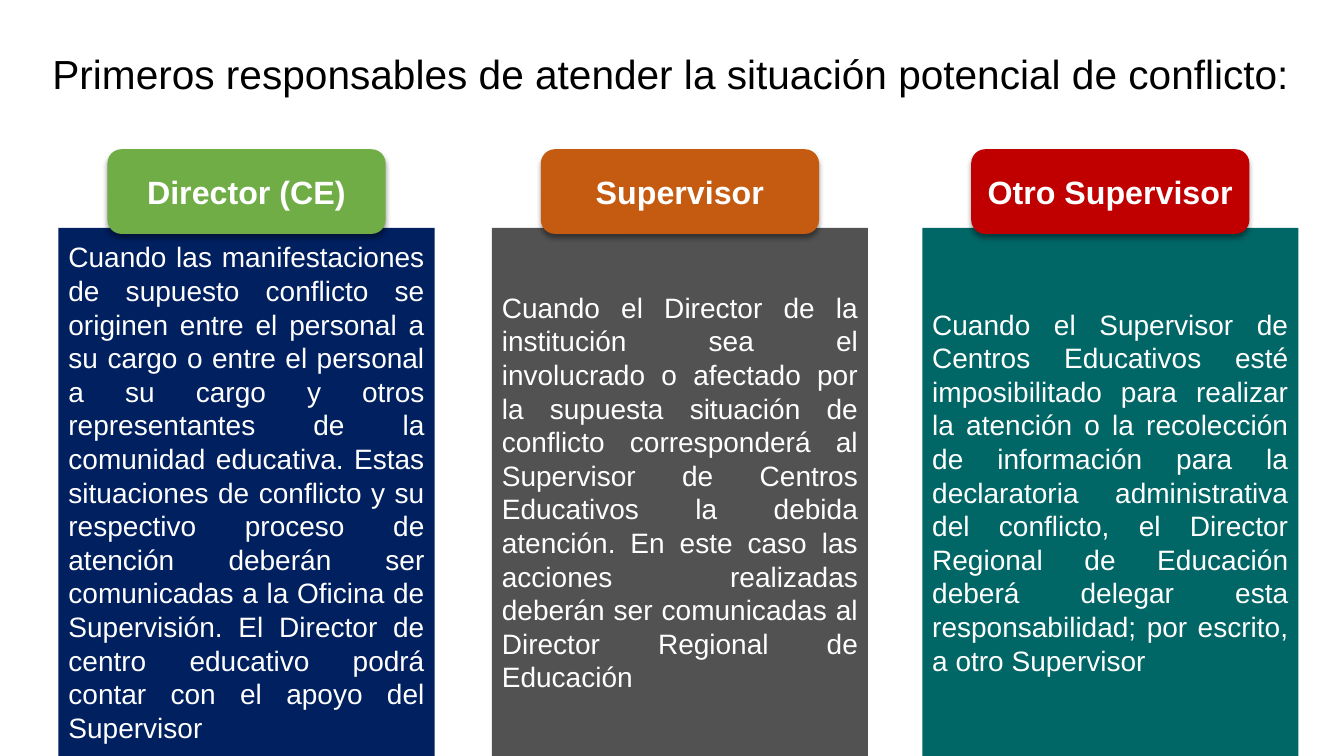
from lxml.etree import SubElement
from pptx import Presentation
from pptx.dml.color import RGBColor
from pptx.enum.shapes import MSO_SHAPE
from pptx.enum.text import MSO_ANCHOR, MSO_AUTO_SIZE, PP_ALIGN
from pptx.oxml.ns import qn
from pptx.util import Pt

BLACK = RGBColor(0x00, 0x00, 0x00)
WHITE = RGBColor(0xFF, 0xFF, 0xFF)
NAVY = RGBColor(0x00, 0x20, 0x60)
GRAY = RGBColor(0x52, 0x52, 0x52)
TEAL = RGBColor(0x00, 0x66, 0x66)
GREEN = RGBColor(0x70, 0xAD, 0x47)
ORANGE = RGBColor(0xC5, 0x5A, 0x11)
RED = RGBColor(0xC0, 0x00, 0x00)

FONT = "Arial"
TITLE = "Primeros responsables de atender la situación potencial de conflicto:"
COLUMNS = [
    (41.8, "Director (CE)", GREEN, NAVY,
     "Cuando las manifestaciones de supuesto conflicto se originen entre el "
     "personal a su cargo o entre el personal a su cargo y otros representantes "
     "de la comunidad educativa. Estas situaciones de conflicto y su respectivo "
     "proceso de atención deberán ser comunicadas a la Oficina de Supervisión. "
     "El Director de centro educativo podrá contar con el apoyo del Supervisor"),
    (351.4, "Supervisor", ORANGE, GRAY,
     "Cuando el Director de la institución sea el involucrado o afectado por la "
     "supuesta situación de conflicto corresponderá al Supervisor de Centros "
     "Educativos la debida atención. En este caso las acciones realizadas "
     "deberán ser comunicadas al Director Regional de Educación"),
    (658.8, "Otro Supervisor", RED, TEAL,
     "Cuando el Supervisor de Centros Educativos esté imposibilitado para "
     "realizar la atención o la recolección de información para la declaratoria "
     "administrativa del conflicto, el Director Regional de Educación deberá "
     "delegar esta responsabilidad; por escrito, a otro Supervisor"),
]
SLIDE_W, SLIDE_H = 960, 540
BODY_TOP, BODY_W = 162.7, 268.6
HEAD_TOP, HEAD_W, HEAD_H = 106.6, 198.7, 60.5


def write(sp, text, size, color, align, anchor, bold=False):
    tf = sp.text_frame
    tf.word_wrap = True
    tf.vertical_anchor = anchor
    p = tf.paragraphs[0]
    p.alignment = align
    r = p.add_run()
    r.text = text
    r.font.name = FONT
    r.font.size = Pt(size)
    r.font.bold = bold
    r.font.color.rgb = color


def add_block(s, kind, left, top, width, height, fill):
    sp = s.shapes.add_shape(kind, Pt(left), Pt(top), Pt(width), Pt(height))
    sp.fill.solid()
    sp.fill.fore_color.rgb = fill
    sp.line.fill.background()
    sp.shadow.inherit = False
    return sp


def add_shadow(sp):
    effects = sp.element.spPr.find(qn("a:effectLst"))
    shadow = SubElement(effects, qn("a:outerShdw"), blurRad=str(Pt(4)),
                        dist=str(Pt(3)), dir="5400000", rotWithShape="0")
    color = SubElement(shadow, qn("a:srgbClr"), val=str(BLACK))
    SubElement(color, qn("a:alpha"), val="40000")


def main():
    prs = Presentation()
    prs.slide_width, prs.slide_height = Pt(SLIDE_W), Pt(SLIDE_H)
    s = prs.slides.add_slide(prs.slide_layouts[5])

    title = s.shapes.title
    title.left, title.top, title.width, title.height = Pt(30.2), Pt(31), Pt(909.4), Pt(42.5)
    write(title, TITLE, 29, BLACK, PP_ALIGN.LEFT, MSO_ANCHOR.TOP)
    title.text_frame.auto_size = MSO_AUTO_SIZE.SHAPE_TO_FIT_TEXT

    for left, heading, head_fill, body_fill, text in COLUMNS:
        body = add_block(s, MSO_SHAPE.RECTANGLE, left, BODY_TOP, BODY_W,
                         SLIDE_H - BODY_TOP, body_fill)
        write(body, text, 20, WHITE, PP_ALIGN.JUSTIFY, MSO_ANCHOR.MIDDLE)
        head = add_block(s, MSO_SHAPE.ROUNDED_RECTANGLE, left + (BODY_W - HEAD_W) / 2,
                         HEAD_TOP, HEAD_W, HEAD_H, head_fill)
        add_shadow(head)
        write(head, heading, 23, WHITE, PP_ALIGN.CENTER, MSO_ANCHOR.MIDDLE, bold=True)

    prs.save("out.pptx")


if __name__ == "__main__":
    main()
